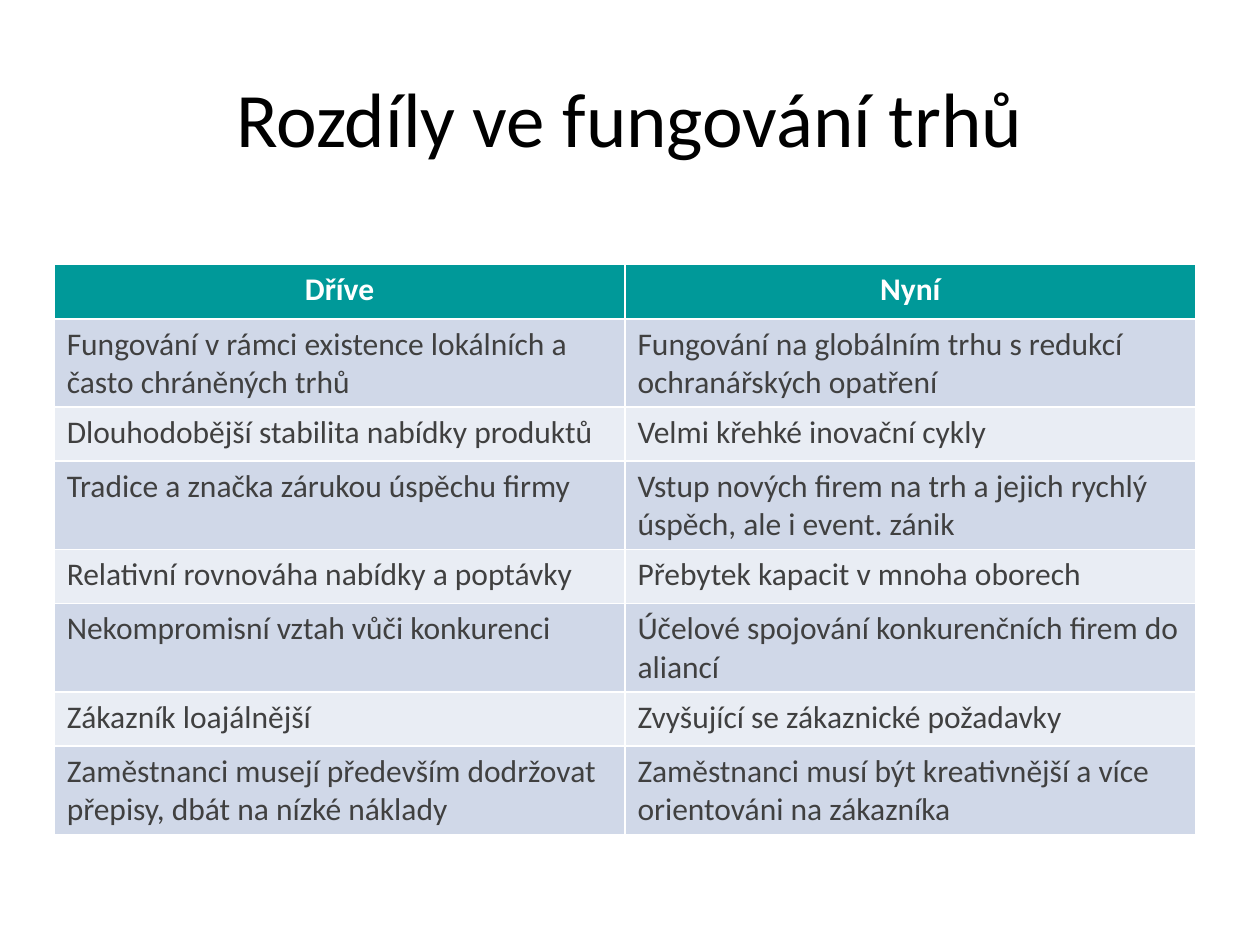
from pptx import Presentation
from pptx.dml.color import RGBColor
from pptx.enum import text
from pptx.util import Inches, Pt


def color(value):
    return RGBColor.from_string(value)


def write(frame, content, size=18, fill="404040", bold=False, align=text.PP_ALIGN.LEFT):
    frame.word_wrap = True
    para = frame.paragraphs[0]
    para.alignment = align
    span = para.add_run()
    span.text = content
    span.font.name = "Calibri"
    span.font.size = Pt(size)
    span.font.bold = bold
    span.font.color.rgb = color(fill)


deck = Presentation()
deck.slide_width = Inches(10)
deck.slide_height = Inches(7.5)
page = deck.slides.add_slide(deck.slide_layouts[6])

title = page.shapes.add_textbox(Inches(0.5), Inches(0.3), Inches(9), Inches(1.25))
title.text_frame.vertical_anchor = text.MSO_ANCHOR.MIDDLE
write(title.text_frame, "Rozdíly ve fungování trhů", size=44, fill="000000",
      align=text.PP_ALIGN.CENTER)

comparison = [
    ("Dříve", "Nyní"),
    ("Fungování v rámci existence lokálních a často chráněných trhů",
     "Fungování na globálním trhu s redukcí ochranářských opatření"),
    ("Dlouhodobější stabilita nabídky produktů", "Velmi křehké inovační cykly"),
    ("Tradice a značka zárukou úspěchu firmy",
     "Vstup nových firem na trh a jejich rychlý úspěch, ale i event. zánik"),
    ("Relativní rovnováha nabídky a poptávky", "Přebytek kapacit v mnoha oborech"),
    ("Nekompromisní vztah vůči konkurenci",
     "Účelové spojování konkurenčních firem do aliancí"),
    ("Zákazník loajálnější", "Zvyšující se zákaznické požadavky"),
    ("Zaměstnanci musejí především dodržovat přepisy, dbát na nízké náklady",
     "Zaměstnanci musí být kreativnější a více orientováni na zákazníka"),
]

table = page.shapes.add_table(len(comparison), 2, Inches(0.43), Inches(2.1),
                              Inches(9.06), Inches(4.54)).table
for r, entries in enumerate(comparison):
    table.rows[r].height = Inches(0.7 if r % 2 else 0.43)
    band = "009999" if r == 0 else "D0D8E8" if r % 2 else "E9EDF4"
    style = {}
    if r == 0:
        style = {"fill": "FFFFFF", "bold": True, "align": text.PP_ALIGN.CENTER}
    for c, entry in enumerate(entries):
        cell = table.cell(r, c)
        cell.fill.solid()
        cell.fill.fore_color.rgb = color(band)
        write(cell.text_frame, entry, **style)

deck.save("out.pptx")
